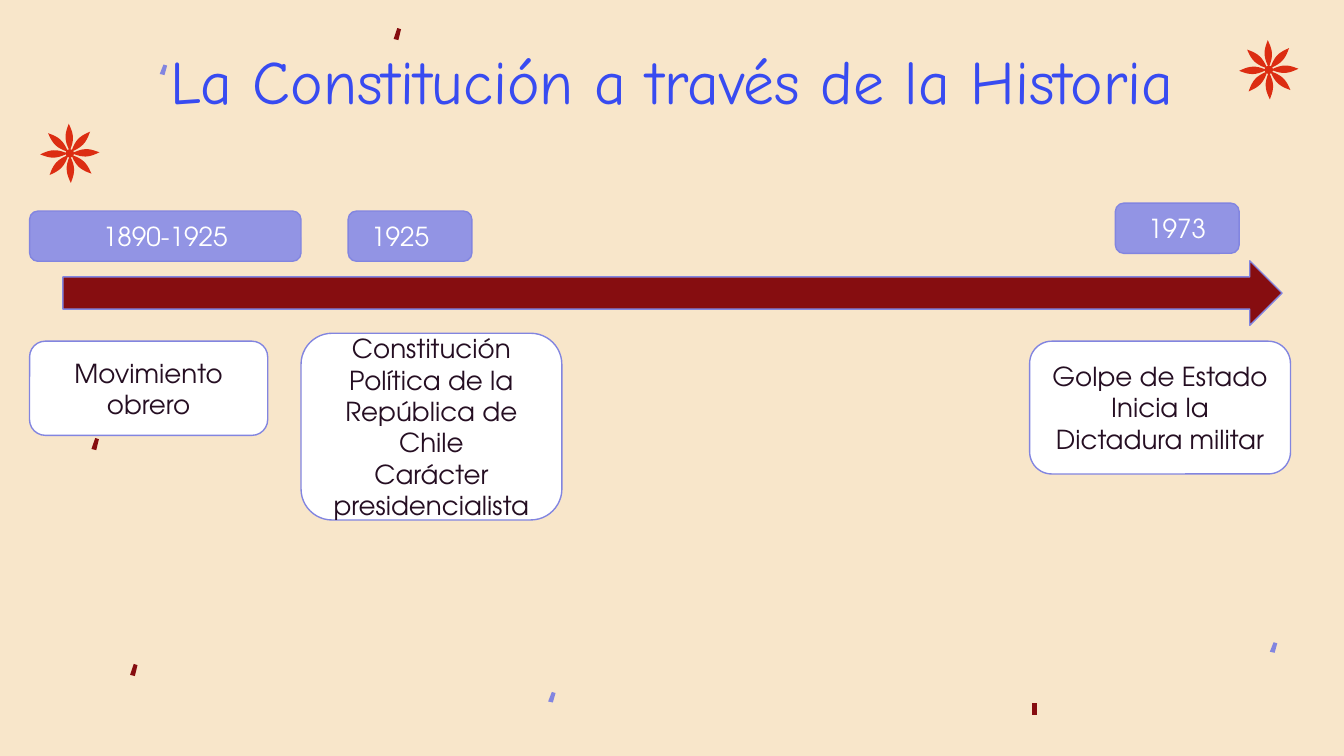
import math

import pptx
import pptx.dml.color
import pptx.enum.shapes
import pptx.enum.text
import pptx.util

Cm = pptx.util.Cm
Pt = pptx.util.Pt
KIND = pptx.enum.shapes.MSO_SHAPE
ALIGN = pptx.enum.text.PP_ALIGN
MID = pptx.enum.text.MSO_ANCHOR.MIDDLE
FONT = "TeX Gyre Adventor"

HUES = {
    "sand": "F8E6CA",
    "blue": "384BF1",
    "lilac": "9294E4",
    "edge": "8285E0",
    "wine": "860D10",
    "red": "DC2D12",
    "ink": "250E22",
    "white": "FFFFFF",
}

# left, top, width, height in cm, then the text
DATES = [
    (0.56, 3.99, 5.13, 0.95, "1890-1925"),
    (6.58, 3.99, 2.34, 0.95, "1925"),
    (21.08, 3.84, 2.34, 0.95, "1973"),
]
EVENTS = [
    (0.56, 6.45, 4.5, 1.78, "Movimiento obrero"),
    (5.69, 6.3, 4.93, 3.53,
     "Constitución Política de la República de Chile\n"
     "Carácter presidencialista"),
    (19.46, 6.45, 4.93, 2.51,
     "Golpe de Estado\nInicia la Dictadura militar"),
]

BLOOMS = [(1.32, 2.9), (23.98, 1.32)]
SLANT = [(0.09, 1), (0, 0.9), (0.07, 0), (0.14, 0.1)]
BLOCK = [(0, 1), (0, 0), (0.09, 0), (0.09, 1)]
# left, top, height in cm, colour, outline
FLECKS = [
    (7.44, 0.53, 0.23, "wine", SLANT),
    (2.46, 12.55, 0.23, "wine", SLANT),
    (1.73, 8.28, 0.23, "wine", SLANT),
    (3.02, 1.22, 0.2, "edge", SLANT),
    (10.36, 13.08, 0.2, "edge", SLANT),
    (24, 12.14, 0.2, "edge", SLANT),
    (19.51, 13.28, 0.23, "wine", BLOCK),
]


def tint(name):
    return pptx.dml.color.RGBColor.from_string(HUES[name])


def paint(shape, fill, line=None):
    shape.shadow.inherit = False
    shape.fill.solid()
    shape.fill.fore_color.rgb = tint(fill)
    if line:
        shape.line.color.rgb = tint(line)
        shape.line.width = Pt(0.75)
    else:
        shape.line.fill.background()


def add_form(slide, kind, area, fill, line=None):
    shape = slide.shapes.add_shape(kind, *[Cm(n) for n in area])
    paint(shape, fill, line)
    return shape


def add_poly(slide, dots, fill):
    """Draw a closed outline through points given in cm."""
    first, *rest = [(Cm(x), Cm(y)) for x, y in dots]
    form = slide.shapes.build_freeform(*first)
    form.add_line_segments(rest)
    paint(form.convert_to_shape(), fill)


def add_bloom(slide, x, y):
    """Draw eight lens-shaped petals around a round heart."""
    near, far, half, steps = 0.04, 0.56, 0.07, 10
    side = [(near + (far - near) * i / steps,
             half * math.sin(math.pi * i / steps)) for i in range(steps + 1)]
    lens = side + [(u, -v) for u, v in side[-2:0:-1]]
    for k in range(8):
        turn = math.radians(45 * k - 2)
        cos, sin = math.cos(turn), math.sin(turn)
        add_poly(slide, [(x + u * cos - v * sin, y + u * sin + v * cos)
                         for u, v in lens], "red")
    add_form(slide, KIND.OVAL, (x - 0.08, y - 0.08, 0.16, 0.16), "red")


def add_fleck(slide, x, y, high, fill, dots):
    add_poly(slide, [(x + u, y + v * high) for u, v in dots], fill)


def style(para, face, size, hue):
    para.alignment = ALIGN.CENTER
    para.font.name = face
    para.font.size = Pt(size)
    para.font.color.rgb = tint(hue)


def set_pads(frame):
    frame.margin_left = frame.margin_right = Cm(0.25)
    frame.margin_top = frame.margin_bottom = Cm(0.25)
    frame.vertical_anchor = MID
    frame.word_wrap = True


def add_card(slide, area, text, fill, hue):
    card = add_form(slide, KIND.ROUNDED_RECTANGLE, area, fill, "edge")
    frame = card.text_frame
    set_pads(frame)
    frame.text = text
    for para in frame.paragraphs:
        style(para, FONT, 14, hue)
    return card


def set_title(slide, text):
    title = slide.shapes.title
    title.left, title.top = Cm(2.62), Cm(0.53)
    title.width, title.height = Cm(20.17), Cm(1.96)
    frame = title.text_frame
    frame.text = text
    frame.auto_size = pptx.enum.text.MSO_AUTO_SIZE.NONE
    set_pads(frame)
    style(frame.paragraphs[0], "Comic Neue", 33, "blue")


def main():
    deck = pptx.Presentation()
    deck.slide_width, deck.slide_height = Cm(25.4), Cm(14.29)
    slide = deck.slides.add_slide(deck.slide_layouts[5])
    slide.background.fill.solid()
    slide.background.fill.fore_color.rgb = tint("sand")

    for spot in BLOOMS:
        add_bloom(slide, *spot)
    for fleck in FLECKS:
        add_fleck(slide, *fleck)

    set_title(slide, "La Constitución a través de la Historia")
    add_form(slide, KIND.RIGHT_ARROW, (1.19, 4.93, 23.04, 1.22),
             "wine", "edge")
    for *area, text in DATES:
        card = add_card(slide, area, text, "lilac", "white")
        if text == "1925":
            card.text_frame.paragraphs[0].alignment = ALIGN.LEFT
            card.text_frame.margin_left = Cm(0.39)
    for *area, text in EVENTS:
        add_card(slide, area, text, "white", "ink")

    deck.save("out.pptx")


if __name__ == "__main__":
    main()
